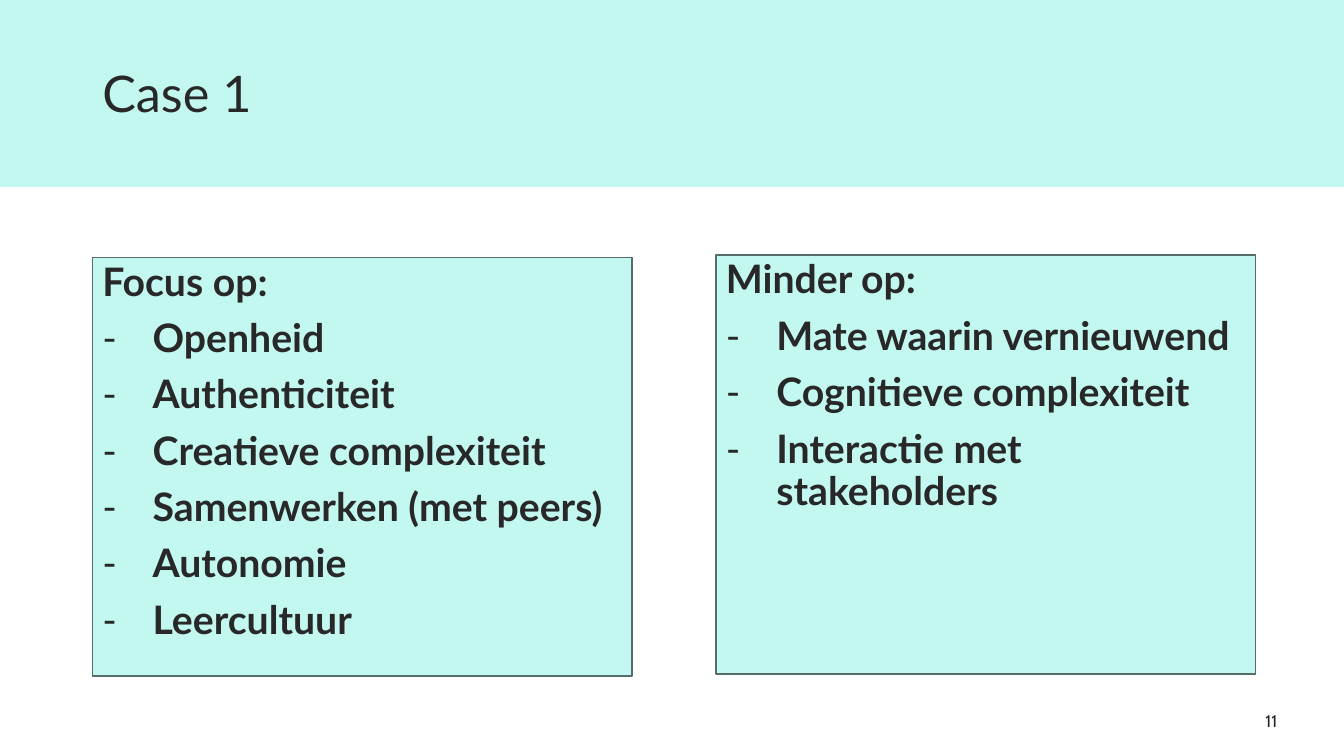
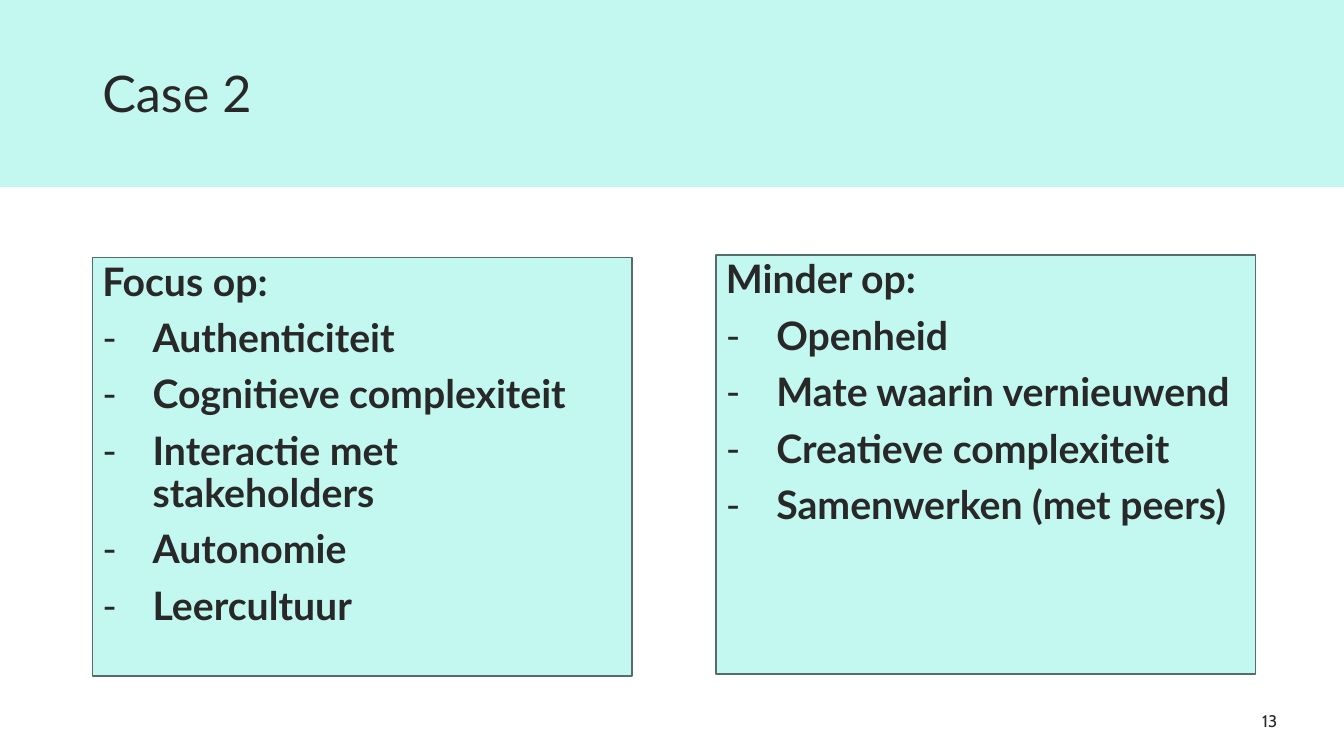
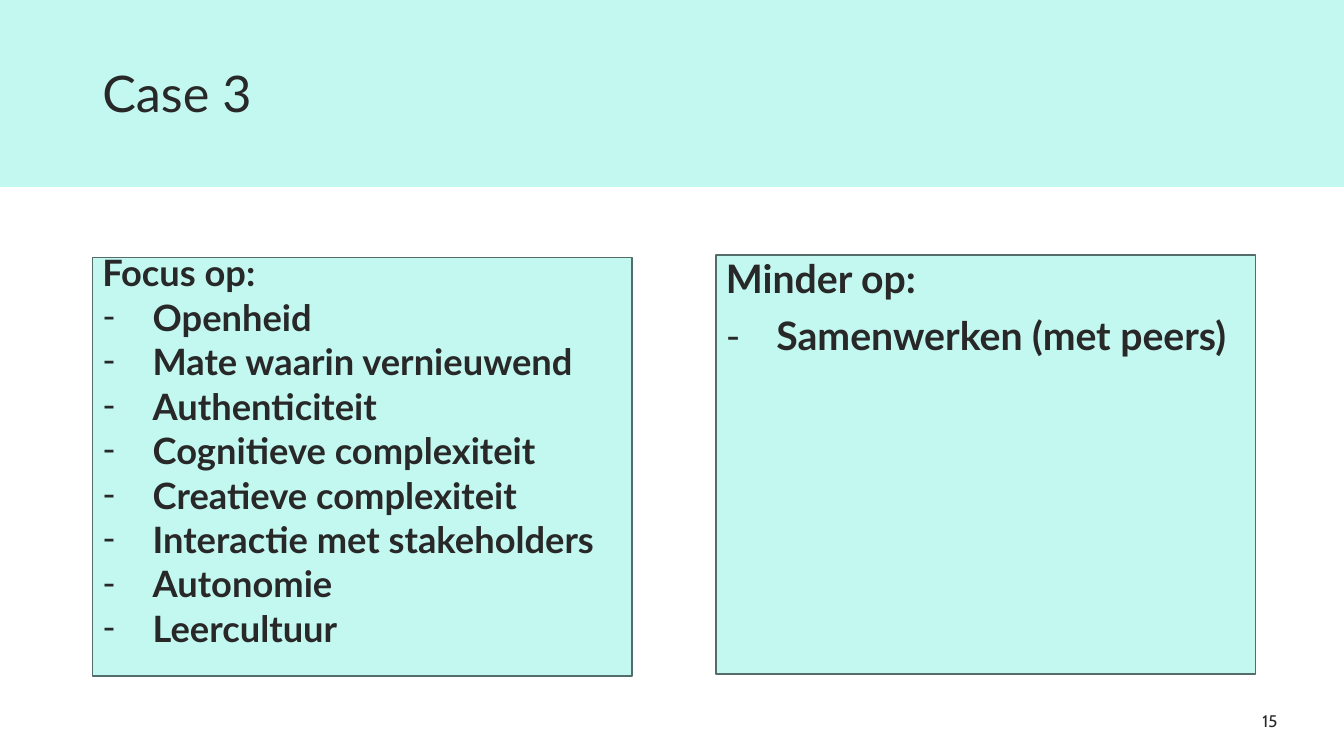
"""Build three case slides that compare what each case focuses on more and less."""
from typing import NamedTuple

from lxml import etree
from pptx import Presentation
from pptx.dml.color import RGBColor
from pptx.enum.shapes import MSO_SHAPE
from pptx.enum.text import MSO_ANCHOR, PP_ALIGN
from pptx.oxml.ns import qn
from pptx.util import Emu, Pt

RECTANGLE = MSO_SHAPE.RECTANGLE
TOP, MIDDLE = MSO_ANCHOR.TOP, MSO_ANCHOR.MIDDLE
LEFT, RIGHT = PP_ALIGN.LEFT, PP_ALIGN.RIGHT

MINT = RGBColor(0xC3, 0xF8, 0xF1)
BORDER = RGBColor(0x55, 0x6D, 0x6A)
INK = RGBColor(0x28, 0x28, 0x28)
BODY_FONT = "Lato"
NUMBER_FONT = "Cabin"

EMU_PER_PX = 9525
BULLET_INDENT = 48
SPACE_BEFORE = Pt(10)


class Box(NamedTuple):
    left: int
    top: int
    width: int
    height: int


class TextStyle(NamedTuple):
    size: float
    font: str = BODY_FONT
    bold: bool = False
    line_spacing: float = 0.9
    align: PP_ALIGN = LEFT


class Panel(NamedTuple):
    heading: str
    items: tuple[str, ...]
    style: TextStyle


class Case(NamedTuple):
    title: str
    number: str
    focus: Panel
    less: Panel


SLIDE = Box(0, 0, 1280, 720)
BAND = Box(0, 0, 1280, 178)
TITLE = Box(88, 61, 876, 96)
FOCUS = Box(88, 245, 514, 399)
LESS = Box(682, 243, 514, 399)
NUMBER = Box(938, 667, 288, 38)

TITLE_STYLE = TextStyle(36)
PANEL_STYLE = TextStyle(28, bold=True)
DENSE_STYLE = TextStyle(25.9, bold=True, line_spacing=0.7)
NUMBER_STYLE = TextStyle(12, NUMBER_FONT, line_spacing=1.0, align=RIGHT)

OPENNESS = "Openheid"
NOVELTY = "Mate waarin vernieuwend"
AUTHENTICITY = "Authenticiteit"
COGNITIVE = "Cognitieve complexiteit"
CREATIVE = "Creatieve complexiteit"
STAKEHOLDERS = "Interactie met stakeholders"
PEERS = "Samenwerken (met peers)"
AUTONOMY = "Autonomie"
LEARNING = "Leercultuur"


def focus_on(*items: str, style: TextStyle = PANEL_STYLE) -> Panel:
    return Panel("Focus op:", items, style)


def less_on(*items: str) -> Panel:
    return Panel("Minder op:", items, PANEL_STYLE)


CASES = (
    Case("Case 1", "11",
         focus_on(OPENNESS, AUTHENTICITY, CREATIVE, PEERS, AUTONOMY, LEARNING),
         less_on(NOVELTY, COGNITIVE, STAKEHOLDERS)),
    Case("Case 2", "13",
         focus_on(AUTHENTICITY, COGNITIVE, STAKEHOLDERS, AUTONOMY, LEARNING),
         less_on(OPENNESS, NOVELTY, CREATIVE, PEERS)),
    Case("Case 3", "15",
         focus_on(OPENNESS, NOVELTY, AUTHENTICITY, COGNITIVE, CREATIVE,
                  STAKEHOLDERS, AUTONOMY, LEARNING, style=DENSE_STYLE),
         less_on(PEERS)),
)


def px(length: int) -> Emu:
    return Emu(length * EMU_PER_PX)


def place(box: Box) -> tuple[Emu, ...]:
    return tuple(px(length) for length in box)


def add_rectangle(slide, box: Box):
    shape = slide.shapes.add_shape(RECTANGLE, *place(box))
    shape.shadow.inherit = False
    shape.fill.solid()
    shape.fill.fore_color.rgb = MINT
    return shape


def add_bullet(paragraph) -> None:
    properties = paragraph._p.get_or_add_pPr()
    properties.set("marL", str(px(BULLET_INDENT)))
    properties.set("indent", str(-px(BULLET_INDENT)))
    etree.SubElement(properties, qn("a:buFont"), typeface=BODY_FONT)
    etree.SubElement(properties, qn("a:buChar"), char="-")


def style_font(font, style: TextStyle) -> None:
    font.name = style.font
    font.size = Pt(style.size)
    font.color.rgb = INK


def write(paragraph, text: str, style: TextStyle, bullet: bool = False) -> None:
    paragraph.alignment = style.align
    paragraph.line_spacing = style.line_spacing
    if bullet:
        paragraph.space_before = SPACE_BEFORE
        add_bullet(paragraph)
    style_font(paragraph.font, style)
    run = paragraph.add_run()
    run.text = text
    style_font(run.font, style)
    run.font.bold = style.bold


def add_label(slide, box: Box, text: str, style: TextStyle, anchor: MSO_ANCHOR = TOP) -> None:
    frame = slide.shapes.add_textbox(*place(box)).text_frame
    frame.word_wrap = True
    frame.vertical_anchor = anchor
    write(frame.paragraphs[0], text, style)


def add_panel(slide, box: Box, panel: Panel) -> None:
    shape = add_rectangle(slide, box)
    shape.line.color.rgb = BORDER
    shape.line.width = Pt(1)
    frame = shape.text_frame
    frame.word_wrap = True
    frame.vertical_anchor = TOP
    write(frame.paragraphs[0], panel.heading, panel.style)
    for item in panel.items:
        write(frame.add_paragraph(), item, panel.style, bullet=True)


def add_case(presentation, case: Case) -> None:
    slide = presentation.slides.add_slide(presentation.slide_layouts[6])
    add_rectangle(slide, BAND).line.fill.background()
    add_label(slide, TITLE, case.title, TITLE_STYLE)
    add_panel(slide, FOCUS, case.focus)
    add_panel(slide, LESS, case.less)
    add_label(slide, NUMBER, case.number, NUMBER_STYLE, MIDDLE)


def main() -> None:
    presentation = Presentation()
    presentation.slide_width = px(SLIDE.width)
    presentation.slide_height = px(SLIDE.height)
    for case in CASES:
        add_case(presentation, case)
    presentation.save("out.pptx")


if __name__ == "__main__":
    main()
